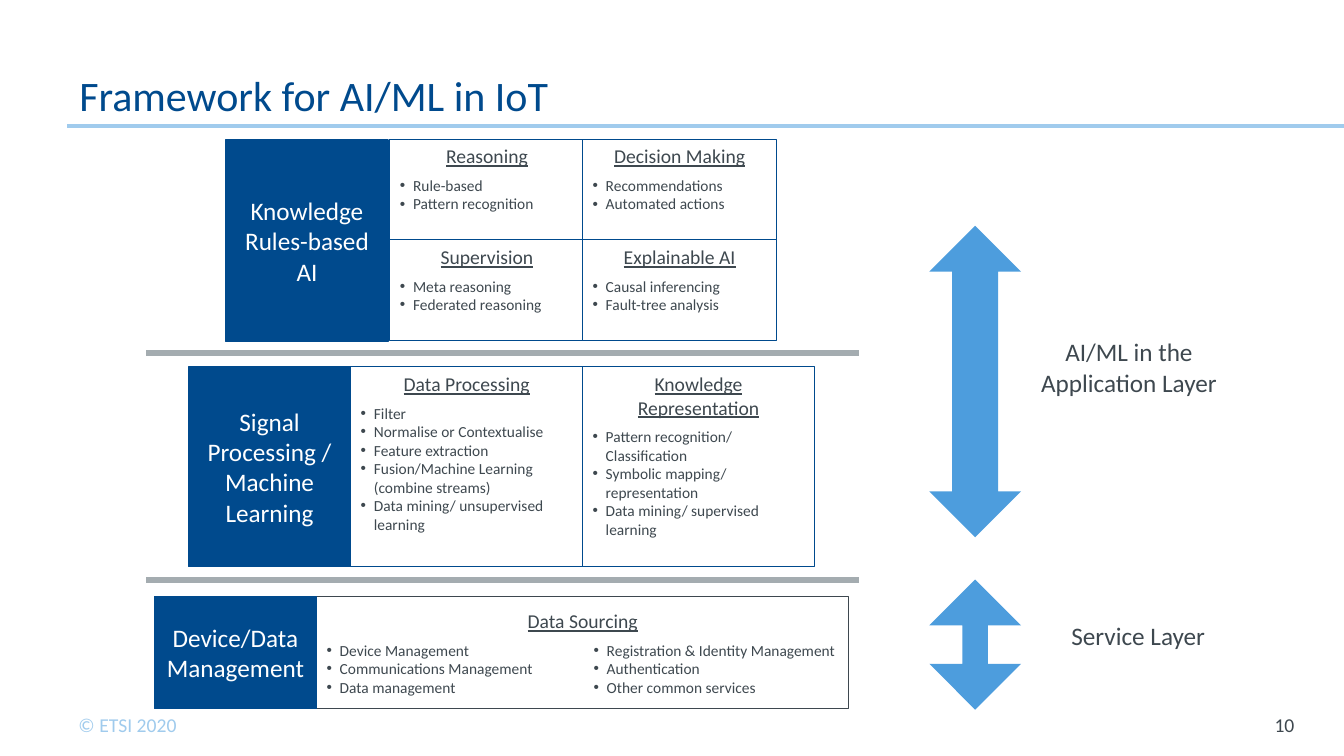
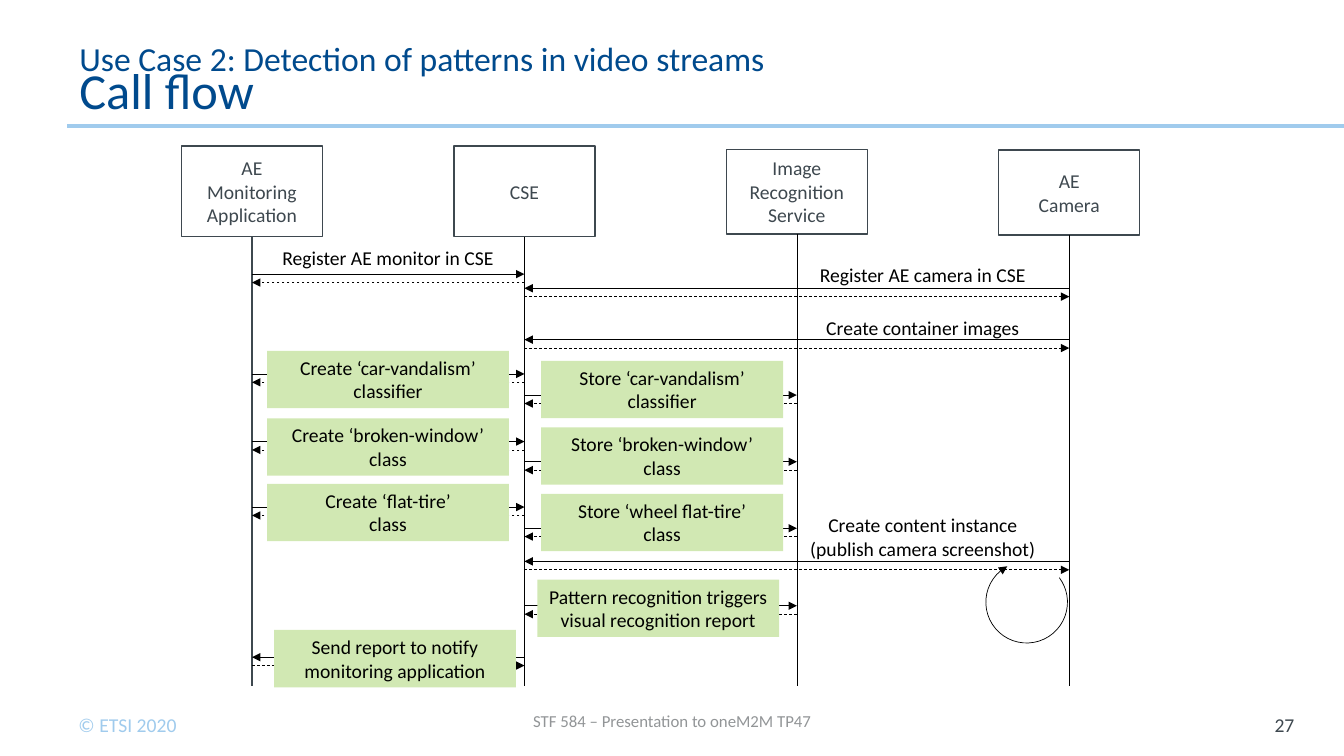
from dataclasses import dataclass

from lxml.etree import SubElement
from pptx import Presentation
from pptx.dml.color import RGBColor
from pptx.enum.dml import MSO_LINE_DASH_STYLE as Dash
from pptx.enum.shapes import MSO_CONNECTOR_TYPE as Connector
from pptx.enum.shapes import MSO_SHAPE as Preset
from pptx.enum.text import MSO_ANCHOR as Anchor
from pptx.enum.text import PP_ALIGN as Align
from pptx.oxml.ns import qn
from pptx.util import Pt


@dataclass(frozen=True)
class Theme:
    font: str = "Calibri"
    navy: str = "004A8D"
    sky: str = "A0CBED"
    blue: str = "4D9DDD"
    ink: str = "3E484F"
    gray: str = "A4ACB0"
    footer_gray: str = "929597"
    green: str = "D1E8B3"
    white: str = "FFFFFF"
    black: str = "000000"
    title: int = 30
    subtitle: int = 24
    large_title: int = 36
    label: int = 18
    body: int = 14
    footer: int = 12
    bullet: int = 11


THEME = Theme()
LABEL_WIDTH = 116
LIFELINE_LEFT, LIFELINE_PITCH, LIFELINE_BOTTOM = 180, 194.6, 490.3
REPLY_GAP = 6


def color(value):
    return RGBColor.from_string(value)


def points(*values):
    return [Pt(value) for value in values]


def write(shape, text, *, size=THEME.body, ink=THEME.ink, align=Align.LEFT, anchor=Anchor.TOP,
          insets=(7.2, 3.6, 7.2, 3.6), underline=False, bullet=False, after=None, spacing=None):
    frame = shape.text_frame
    frame.word_wrap = True
    frame.vertical_anchor = anchor
    frame.margin_left, frame.margin_top, frame.margin_right, frame.margin_bottom = points(*insets)
    for line in text.split("\n"):
        first = frame.paragraphs[0]
        paragraph = frame.add_paragraph() if first.text else first
        paragraph.text = line
        paragraph.alignment = align
        if after:
            paragraph.space_after = Pt(after)
        if spacing:
            paragraph.line_spacing = Pt(spacing)
        if bullet:
            add_bullet(paragraph)
        for run in paragraph.runs:
            run.font.name = THEME.font
            run.font.size = Pt(size)
            run.font.color.rgb = color(ink)
            run.font.underline = underline
    return shape


def add_bullet(paragraph):
    properties = paragraph._p.get_or_add_pPr()
    properties.set("marL", str(Pt(9.4)))
    properties.set("indent", str(-Pt(9.4)))
    SubElement(properties, qn("a:buFont"), typeface="Arial")
    SubElement(properties, qn("a:buChar"), char="•")


def add_text(slide, box, text, **style):
    return write(slide.shapes.add_textbox(*points(*box)), text, **style)


def add_block(slide, box, preset=Preset.RECTANGLE, fill=None, line=None, width=1, adjust=()):
    shape = slide.shapes.add_shape(preset, *points(*box))
    shape.shadow.inherit = False
    if fill:
        shape.fill.solid()
        shape.fill.fore_color.rgb = color(fill)
    else:
        shape.fill.background()
    if line:
        shape.line.color.rgb = color(line)
        shape.line.width = Pt(width)
    else:
        shape.line.fill.background()
    for index, value in enumerate(adjust):
        shape.adjustments[index] = value
    return shape


def add_arrowhead(shape):
    SubElement(shape.element.spPr.find(qn("a:ln")), qn("a:tailEnd"), type="triangle")


def add_line(slide, start, end, ink=THEME.black, width=0.5, arrow=False, dashed=False):
    connector = slide.shapes.add_connector(Connector.STRAIGHT, *points(*start, *end))
    connector.line.color.rgb = color(ink)
    connector.line.width = Pt(width)
    if dashed:
        connector.line.dash_style = Dash.DASH
    if arrow:
        add_arrowhead(connector)
    SubElement(connector.element.spPr, qn("a:effectLst"))


def add_slide(presentation, title, number, size=THEME.title):
    slide = presentation.slides.add_slide(presentation.slide_layouts[6])
    add_text(slide, (49, 505.4, 96.5, 24.5), "© ETSI 2020", ink=THEME.sky)
    add_text(slide, (882, 503.3, 49.7, 28.8), number, align=Align.RIGHT, anchor=Anchor.MIDDLE,
             insets=(0, 3.6, 7.2, 3.6))
    add_line(slide, (48, 90), (960, 90), THEME.sky, 2.25)
    heading = add_text(slide, (48, 21.6, 750, 68.4), title, size=size, ink=THEME.navy,
                       anchor=Anchor.BOTTOM, insets=(8.7, 4.3, 8.7, 4.3), spacing=30)
    return slide, heading


def add_layer_label(slide, left, top, height, text):
    block = add_block(slide, (left, top, LABEL_WIDTH, height), fill=THEME.navy, line=THEME.navy)
    write(block, text, size=THEME.label, ink=THEME.white, align=Align.CENTER, anchor=Anchor.MIDDLE)


def add_panel(slide, box, heading, bullets, line=THEME.navy, width=0.75, anchor=Anchor.TOP):
    block = add_block(slide, box, fill=THEME.white, line=line, width=width)
    write(block, heading, align=Align.CENTER, underline=True, after=6, anchor=anchor)
    write(block, bullets, size=THEME.bullet, bullet=True, anchor=anchor)


def add_span_arrow(slide, top, height, head):
    add_block(slide, (663.8, top, 65.5, height), Preset.UP_DOWN_ARROW, fill=THEME.blue,
              adjust=(0.584, head))


def build_framework(presentation):
    slide, _ = add_slide(presentation, "Framework for AI/ML in IoT", "10")
    knowledge = (
        ("Reasoning", "Rule-based\nPattern recognition"),
        ("Decision Making", "Recommendations\nAutomated actions"),
        ("Supervision", "Meta reasoning\nFederated reasoning"),
        ("Explainable AI", "Causal inferencing\nFault-tree analysis"),
    )
    for index, (heading, bullets) in enumerate(knowledge):
        row, column = divmod(index, 2)
        add_panel(slide, (278.6 + 137.6 * column, 99.4 + 72 * row, 138.6, 72), heading, bullets)
    add_layer_label(slide, 161.3, 100, 144, "Knowledge Rules-based AI")

    processing = (
        ("Data Processing", "Filter\nNormalise or Contextualise\nFeature extraction\n"
         "Fusion/Machine Learning (combine streams)\nData mining/ unsupervised learning"),
        ("Knowledge Representation", "Pattern recognition/ Classification\n"
         "Symbolic mapping/ representation\nData mining/ supervised learning"),
    )
    for column, (heading, bullets) in enumerate(processing):
        add_panel(slide, (250.6 + 165.6 * column, 262.1, 165.6, 142.6), heading, bullets)
    add_layer_label(slide, 134.6, 262.1, 142.6, "Signal Processing / Machine Learning")

    add_panel(slide, (226.2, 426.2, 380, 80), "Data Sourcing",
              "Device Management\nCommunications Management\nData management",
              THEME.ink, 1, Anchor.MIDDLE)
    add_layer_label(slide, 110.2, 426.2, 80, "Device/Data Management")
    add_text(slide, (416.9, 454.3, 190.8, 47.5),
             "Registration & Identity Management\nAuthentication\nOther common services",
             size=THEME.bullet, bullet=True)

    for y in (252, 414):
        add_line(slide, (104.4, y), (613.4, y), THEME.gray, 4.25)
    add_span_arrow(slide, 161.3, 222.5, 0.5)
    add_span_arrow(slide, 414, 92.9, 0.277)
    add_text(slide, (717.1, 236.9, 178.6, 51.1), "AI/ML in the Application Layer",
             size=THEME.label, align=Align.CENTER)
    add_text(slide, (758.2, 439.9, 126, 28.8), "Service Layer", size=THEME.label)


def lifeline_x(actor):
    return LIFELINE_LEFT + LIFELINE_PITCH * actor


def add_actor(slide, index, name, top, height, ink, width):
    x = lifeline_x(index)
    block = add_block(slide, (x - 50.4, top, 100.8, height), fill=THEME.white, line=THEME.ink)
    write(block, name, align=Align.CENTER, anchor=Anchor.MIDDLE)
    add_line(slide, (x, top + height), (x, LIFELINE_BOTTOM), ink, width)


def add_message(slide, source, target, y):
    start, end = lifeline_x(source), lifeline_x(target)
    add_line(slide, (start, y), (end, y), arrow=True)
    add_line(slide, (end, y + REPLY_GAP), (start, y + REPLY_GAP), arrow=True, dashed=True)


def add_caption(slide, center, top, text, fill=None):
    width = 172.8 if fill else 185
    block = add_block(slide, (center - width / 2, top, width, 41), fill=fill)
    write(block, text, ink=THEME.black, align=Align.CENTER)


def build_call_flow(presentation):
    title = "Use Case 2: Detection of patterns in video streams\vCall flow"
    slide, heading = add_slide(presentation, title, "27", THEME.large_title)
    heading.text_frame.paragraphs[0].runs[0].font.size = Pt(THEME.subtitle)
    add_text(slide, (318.2, 500.4, 324, 28.8), "STF 584 – Presentation to oneM2M TP47",
             size=THEME.footer, ink=THEME.footer_gray, align=Align.CENTER, anchor=Anchor.MIDDLE)

    actors = (
        ("AE\nMonitoring Application", 104.4, 64.8, THEME.ink, 1),
        ("CSE", 104.4, 64.8, THEME.black, 0.5),
        ("Image Recognition Service", 106.6, 60.5, THEME.black, 0.5),
        ("AE\vCamera", 107.3, 60.5, THEME.black, 0.5),
    )
    for index, actor in enumerate(actors):
        add_actor(slide, index, *actor)

    monitor, cse, recognition, camera = range(len(actors))
    messages = (
        (monitor, cse, 195.8, 277.2, 172.1, "Register AE monitor in CSE", None),
        (camera, cse, 205.9, 659.2, 184.3, "Register AE camera in CSE", None),
        (camera, cse, 242.6, 659.2, 221.8, "Create container images", None),
        (monitor, cse, 267.1, 277.2, 250.6, "Create ‘car-vandalism’ classifier", THEME.green),
        (cse, recognition, 282.2, 473, 257.8, "Store ‘car-vandalism’ classifier", THEME.green),
        (monitor, cse, 315.4, 277.2, 298.8, "Create ‘broken-window’ class", THEME.green),
        (cse, recognition, 329.8, 473, 305.3, "Store ‘broken-window’ class", THEME.green),
        (monitor, cse, 362.2, 277.2, 345.6, "Create ‘flat-tire’\nclass", THEME.green),
        (cse, recognition, 377.3, 473, 352.8, "Store ‘wheel flat-tire’\nclass", THEME.green),
        (camera, cse, 401, 659.2, 362.9,
         "Create content instance\v(publish camera screenshot)", None),
        (cse, recognition, 432.7, 470.2, 414,
         "Pattern recognition triggers visual recognition report", THEME.green),
        (cse, monitor, 469.4, 282.2, 450,
         "Send report to notify monitoring application", THEME.green),
    )
    for source, target, y, center, top, text, fill in messages:
        add_message(slide, source, target, y)
        add_caption(slide, center, top, text, fill)

    loop = add_block(slide, (704.2, 401, 58.3, 58.3), Preset.ARC, line=THEME.black, width=0.5,
                     adjust=(1.959, 169.111))
    loop.rotation = 319.8
    add_arrowhead(loop)


def main():
    presentation = Presentation()
    presentation.slide_width, presentation.slide_height = points(960, 540)
    build_framework(presentation)
    build_call_flow(presentation)
    presentation.save("out.pptx")


if __name__ == "__main__":
    main()
